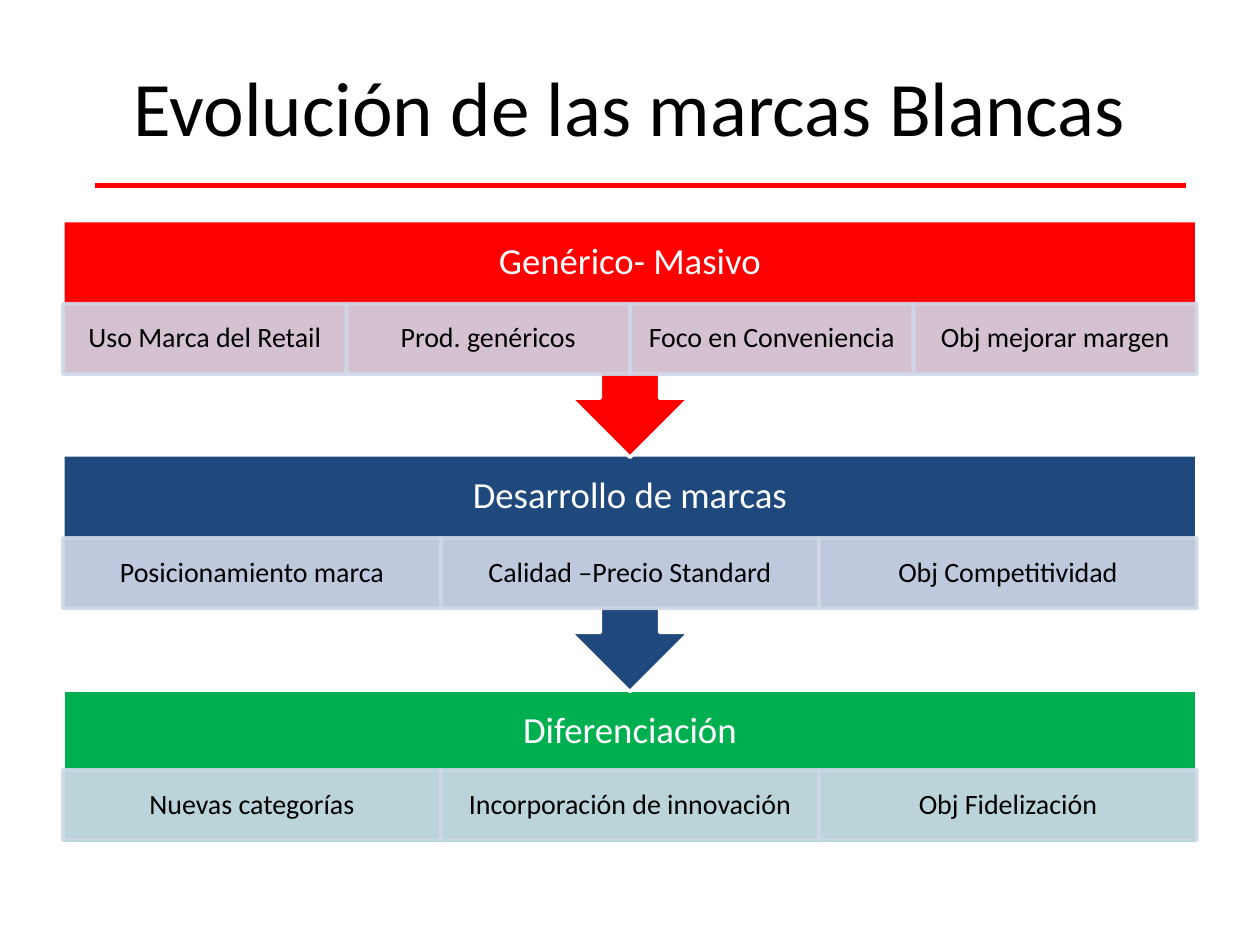
from dataclasses import dataclass

from lxml import etree
from pptx import Presentation
from pptx.dml.color import RGBColor
from pptx.enum.shapes import MSO_CONNECTOR, MSO_SHAPE
from pptx.enum.text import MSO_ANCHOR, PP_ALIGN
from pptx.oxml.ns import qn
from pptx.util import Inches, Pt

RECT = MSO_SHAPE.RECTANGLE
CALLOUT = MSO_SHAPE.DOWN_ARROW_CALLOUT
STRAIGHT = MSO_CONNECTOR.STRAIGHT
MIDDLE = MSO_ANCHOR.MIDDLE
CENTER = PP_ALIGN.CENTER

FONT = "Calibri"
COLORS = {
    "red": "FF0000",
    "blue": "1F497D",
    "green": "00B050",
    "cell": "D0D8E8",
    "white": "FFFFFF",
    "black": "000000",
}
LEFT, WIDTH = 0.5, 9
BODY_H, CALLOUT_H = 1.22, 1.88
HEADER_H, CELL_H = 0.66, 0.56


@dataclass
class Stage:
    title: str
    color: str
    top: float
    cell_top: float
    items: list[str]
    has_arrow: bool = True


# Later stages lie behind earlier ones, so the arrow tips stay visible.
STAGES = [
    Stage("Diferenciación", "green", 5.48, 6.11,
          ["Nuevas categorías", "Incorporación de innovación", "Obj Fidelización"],
          has_arrow=False),
    Stage("Desarrollo de marcas", "blue", 3.61, 4.27,
          ["Posicionamiento marca", "Calidad –Precio Standard", "Obj Competitividad"]),
    Stage("Genérico- Masivo", "red", 1.75, 2.41,
          ["Uso Marca del Retail", "Prod. genéricos", "Foco en Conveniencia",
           "Obj mejorar margen"]),
]


def rgb(name: str) -> RGBColor:
    return RGBColor.from_string(COLORS[name])


def set_text(s, text: str, size: float, color: str,
             insets: tuple[float, float, float, float], spacing: float = 0.9) -> None:
    """Write one centred line; insets run left, top, right, bottom."""
    tf = s.text_frame
    tf.text = text
    tf.word_wrap = True
    tf.vertical_anchor = MIDDLE
    tf.margin_left, tf.margin_top, tf.margin_right, tf.margin_bottom = map(Inches, insets)
    p = tf.paragraphs[0]
    p.alignment = CENTER
    p.line_spacing = spacing
    font = p.runs[0].font
    font.name, font.size = FONT, Pt(size)
    font.color.rgb = rgb(color)


def add_box(slide, kind, left: float, top: float, width: float, height: float,
            fill: str, line: str):
    s = slide.shapes.add_shape(kind, Inches(left), Inches(top), Inches(width), Inches(height))
    s.shadow.inherit = False
    s.fill.solid()
    s.fill.fore_color.rgb = rgb(fill)
    s.line.color.rgb = rgb(line)
    s.line.width = Pt(2)
    return s


def set_opacity(s, percent: int) -> None:
    """Apply the opacity to both fill and outline."""
    for color in s._element.spPr.iter(qn("a:srgbClr")):
        etree.SubElement(color, qn("a:alpha"), val=str(percent * 1000))


def add_stage(slide, stage: Stage) -> None:
    kind, height = (CALLOUT, CALLOUT_H) if stage.has_arrow else (RECT, BODY_H)
    s = add_box(slide, kind, LEFT, stage.top, WIDTH, height, stage.color, "white")
    # The bottom inset keeps the heading above the row of cells.
    set_text(s, stage.title, 21, "white", (0.16, 0.16, 0.16, BODY_H - HEADER_H + 0.16))
    cell_w = WIDTH / len(stage.items)
    for i, item in enumerate(stage.items):
        s = add_box(slide, RECT, LEFT + i * cell_w, stage.cell_top, cell_w, CELL_H,
                    "cell", "cell")
        set_opacity(s, 90)
        set_text(s, item, 16, "black", (0.12, 0.02, 0.12, 0.02))


def add_title(slide, text: str) -> None:
    s = slide.shapes.add_textbox(Inches(LEFT), Inches(0.21), Inches(WIDTH), Inches(1.25))
    set_text(s, text, 44, "black", (0.1, 0.05, 0.1, 0.05), spacing=1.0)


def add_rule(slide) -> None:
    s = slide.shapes.add_connector(STRAIGHT, Inches(0.75), Inches(1.47),
                                   Inches(9.41), Inches(1.47))
    s.line.color.rgb = rgb("red")
    s.line.width = Pt(3)
    etree.SubElement(s._element.spPr, qn("a:effectLst"))


def main() -> None:
    prs = Presentation()
    prs.slide_width, prs.slide_height = Inches(10), Inches(7.5)
    slide = prs.slides.add_slide(prs.slide_layouts[6])
    add_title(slide, "Evolución de las marcas Blancas")
    for stage in STAGES:
        add_stage(slide, stage)
    add_rule(slide)
    prs.save("out.pptx")


if __name__ == "__main__":
    main()
